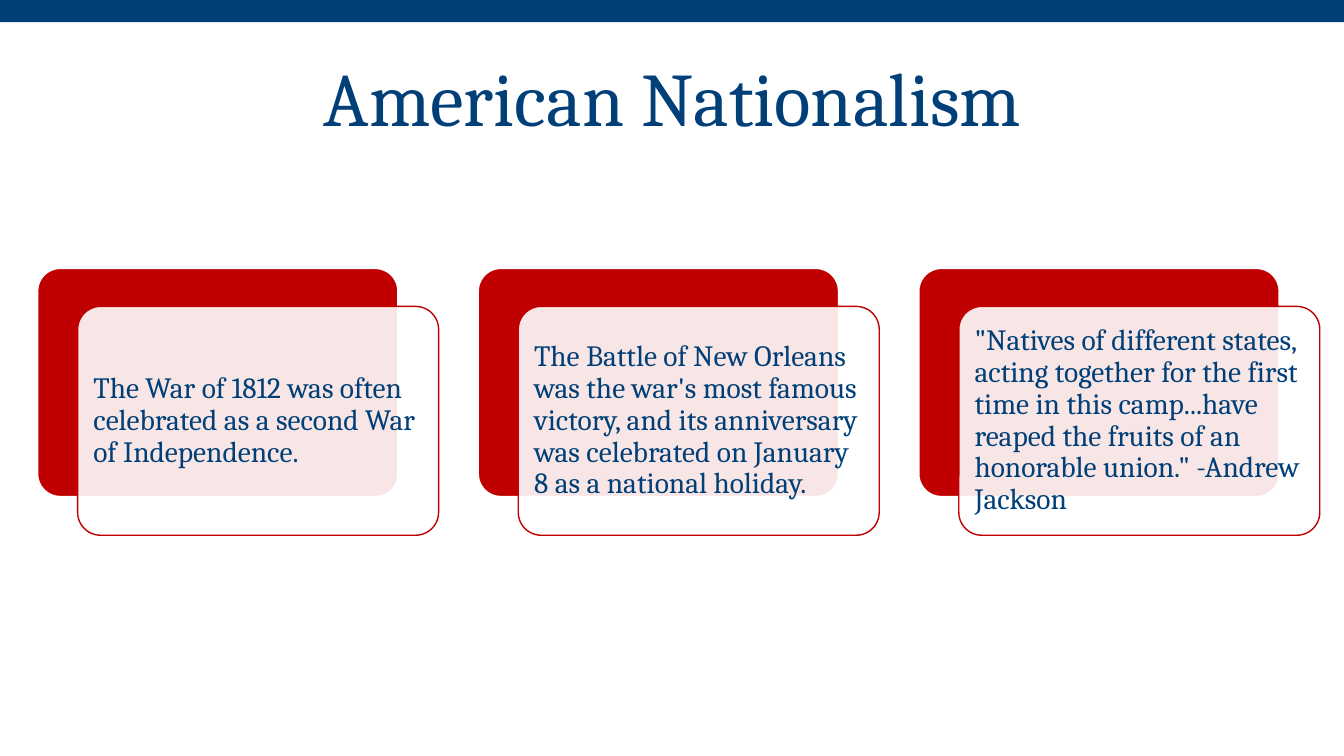
from lxml import etree
from pptx import Presentation
from pptx.dml.color import RGBColor
from pptx.enum.shapes import MSO_SHAPE
from pptx.enum.text import MSO_ANCHOR, PP_ALIGN
from pptx.oxml.ns import qn
from pptx.util import Pt

TITLE = "American Nationalism"
CARDS = [
    "The War of 1812 was often celebrated as a second War of Independence.",
    "The Battle of New Orleans was the war's most famous victory, and its "
    "anniversary was celebrated on January 8 as a national holiday.",
    "\"Natives of different states, acting together for the first time in this "
    "camp...have reaped the fruits of an honorable union.\" -Andrew Jackson",
]

FONT = "Cambria"
NAVY, RED, WHITE = "003F77", "C00000", "FFFFFF"
RECT, ROUNDED = MSO_SHAPE.RECTANGLE, MSO_SHAPE.ROUNDED_RECTANGLE
LEFT, CENTER, MIDDLE = PP_ALIGN.LEFT, PP_ALIGN.CENTER, MSO_ANCHOR.MIDDLE

PX = 9144  # EMU per px, 100 px to the inch
SLIDE_W, SLIDE_H = 1333, 750
BAR_H = 22
TITLE_BOX = (92, 15, 1150, 172)
CARD_X, CARD_Y, CARD_W, CARD_H = 37, 266, 358, 227
CARD_STEP = 437
SHIFT_X, SHIFT_Y = 40, 38
CARD_INSET = 9


def color(hex_code):
    return RGBColor.from_string(hex_code)


def add_block(slide, kind, box, fill, line=None, line_pt=1):
    block = slide.shapes.add_shape(kind, *(v * PX for v in box))
    block.shadow.inherit = False
    block.fill.solid()
    block.fill.fore_color.rgb = color(fill)
    if line:
        block.line.color.rgb = color(line)
        block.line.width = Pt(line_pt)
    else:
        block.line.fill.background()
    if kind == ROUNDED:
        block.adjustments[0] = 0.1
    return block


def set_opacity(block, percent):
    fill_color = block.fill._xPr.find(qn("a:solidFill"))[0]
    etree.SubElement(fill_color, qn("a:alpha")).set("val", str(percent * 1000))


def write(holder, text, size, align):
    frame = holder.text_frame
    frame.text = text
    frame.word_wrap = True
    frame.vertical_anchor = MIDDLE
    paragraph = frame.paragraphs[0]
    paragraph.alignment = align
    paragraph.line_spacing = 0.9
    font = paragraph.runs[0].font
    font.name, font.size = FONT, Pt(size)
    font.color.rgb = color(NAVY)


def add_card(slide, x, text):
    add_block(slide, ROUNDED, (x, CARD_Y, CARD_W, CARD_H), RED, WHITE, 1.5)
    front_box = (x + SHIFT_X, CARD_Y + SHIFT_Y, CARD_W, CARD_H)
    front = add_block(slide, ROUNDED, front_box, WHITE, RED)
    set_opacity(front, 90)
    frame = front.text_frame
    frame.margin_left = frame.margin_right = CARD_INSET * PX
    frame.margin_top = frame.margin_bottom = CARD_INSET * PX
    write(front, text, 21, LEFT)


def main():
    deck = Presentation()
    deck.slide_width, deck.slide_height = SLIDE_W * PX, SLIDE_H * PX
    slide = deck.slides.add_slide(deck.slide_layouts[5])

    add_block(slide, RECT, (0, 0, SLIDE_W, BAR_H), NAVY)
    title = slide.shapes.title
    title.left, title.top, title.width, title.height = (v * PX for v in TITLE_BOX)
    write(title, TITLE, 54, CENTER)

    for i, text in enumerate(CARDS):
        add_card(slide, CARD_X + i * CARD_STEP, text)

    deck.save("out.pptx")


if __name__ == "__main__":
    main()
